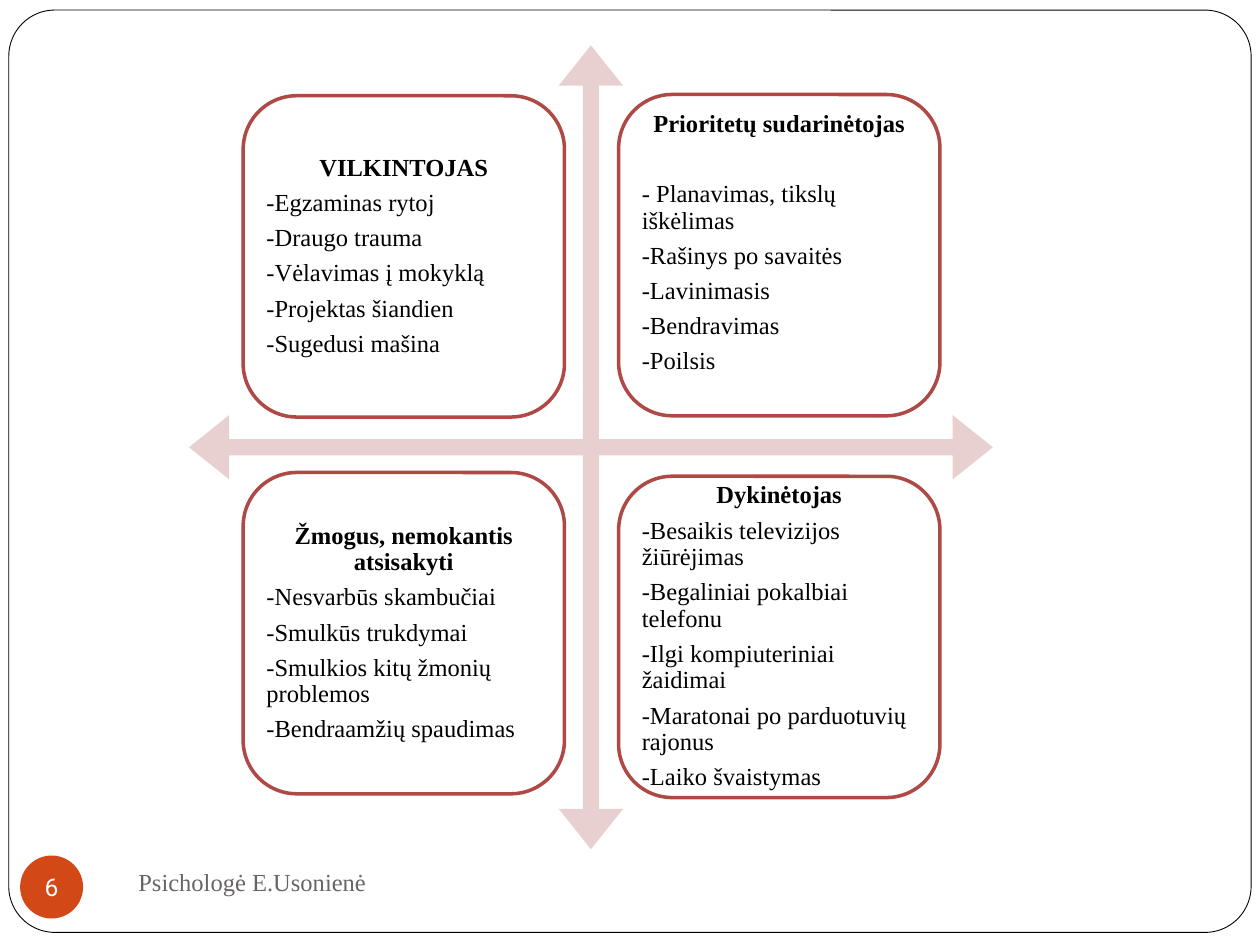
from dataclasses import dataclass

from pptx import Presentation
from pptx.dml.color import RGBColor
from pptx.enum.shapes import MSO_SHAPE
from pptx.enum.text import MSO_ANCHOR, PP_ALIGN
from pptx.util import Inches, Pt

SERIF = "Times New Roman"
SIDE = 2.55
PAD = 0.06


@dataclass
class Card:
    left: float
    top: float
    title: str
    items: list[str]
    align: PP_ALIGN = PP_ALIGN.LEFT
    gap: float = 5  # points below the title
    base: float = PAD  # bottom inset


CARDS = [
    Card(1.93, 0.76, "VILKINTOJAS",
         ["-Egzaminas rytoj", "-Draugo trauma", "-Vėlavimas į mokyklą",
          "-Projektas šiandien", "-Sugedusi mašina"], PP_ALIGN.JUSTIFY),
    Card(4.91, 0.75, "Prioritetų sudarinėtojas",
         ["- Planavimas, tikslų iškėlimas", "-Rašinys po savaitės",
          "-Lavinimasis", "-Bendravimas", "-Poilsis"], gap=25, base=0.25),
    Card(1.93, 3.75, "Žmogus, nemokantis atsisakyti",
         ["-Nesvarbūs skambučiai", "-Smulkūs trukdymai",
          "-Smulkios kitų žmonių problemos", "-Bendraamžių spaudimas"]),
    Card(4.91, 3.78, "Dykinėtojas",
         ["-Besaikis televizijos žiūrėjimas", "-Begaliniai pokalbiai telefonu",
          "-Ilgi kompiuteriniai žaidimai", "-Maratonai po parduotuvių rajonus",
          "-Laiko švaistymas"]),
]


def color(code: str) -> RGBColor:
    return RGBColor.from_string(code)


def add_shape(slide, kind, left: float, top: float, width: float, height: float,
              fill: str, line: str = "", weight: float = 1, adj: tuple = ()):
    shape = slide.shapes.add_shape(
        kind, Inches(left), Inches(top), Inches(width), Inches(height))
    shape.shadow.inherit = False
    shape.fill.solid()
    shape.fill.fore_color.rgb = color(fill)
    if line:
        shape.line.color.rgb = color(line)
        shape.line.width = Pt(weight)
    else:
        shape.line.fill.background()
    for i, value in enumerate(adj):
        shape.adjustments[i] = value
    return shape


def set_inset(frame, side: float, base: float) -> None:
    frame.margin_left = frame.margin_right = frame.margin_top = Inches(side)
    frame.margin_bottom = Inches(base)


def set_font(para, code: str, name: str = SERIF, bold: bool = False) -> None:
    for run in para.runs:
        run.font.name = name
        run.font.size = Pt(14)
        run.font.bold = bold
        run.font.color.rgb = color(code)


def add_card(slide, card: Card) -> None:
    shape = add_shape(slide, MSO_SHAPE.ROUNDED_RECTANGLE, card.left, card.top,
                      SIDE, SIDE, "FFFFFF", "AE4946", 2)
    frame = shape.text_frame
    frame.word_wrap = True
    frame.vertical_anchor = MSO_ANCHOR.MIDDLE
    set_inset(frame, PAD, card.base)
    frame.text = "\n".join([card.title, *card.items])
    for i, para in enumerate(frame.paragraphs):
        head = i == 0
        para.alignment = PP_ALIGN.CENTER if head else card.align
        para.line_spacing = 0.9
        para.space_after = Pt(card.gap if head else 5)
        set_font(para, "000000", bold=head)


def add_footer(slide, text: str, number: str) -> None:
    box = slide.shapes.add_textbox(
        Inches(1), Inches(6.75), Inches(4.33), Inches(0.5))
    frame = box.text_frame
    frame.word_wrap = True
    frame.vertical_anchor = MSO_ANCHOR.MIDDLE
    frame.text = text
    set_font(frame.paragraphs[0], "696464")

    badge = add_shape(slide, MSO_SHAPE.OVAL, 0.16, 6.79, 0.5, 0.5, "D34817")
    frame = badge.text_frame
    frame.word_wrap = False
    frame.vertical_anchor = MSO_ANCHOR.MIDDLE
    set_inset(frame, 0, 0)
    frame.text = number
    frame.paragraphs[0].alignment = PP_ALIGN.CENTER
    set_font(frame.paragraphs[0], "FFFFFF", "Roboto")


def main() -> None:
    deck = Presentation()
    deck.slide_width, deck.slide_height = Inches(10), Inches(7.5)
    slide = deck.slides.add_slide(deck.slide_layouts[6])
    add_shape(slide, MSO_SHAPE.ROUNDED_RECTANGLE, 0.07, 0.08, 9.86, 7.32,
              "FFFFFF", "000000", 0.5, (0.05,))
    add_shape(slide, MSO_SHAPE.QUAD_ARROW, 1.5, 0.36, 6.38, 6.38,
              "E8D0D0", adj=(0.02, 0.04, 0.05))
    for card in CARDS:
        add_card(slide, card)
    add_footer(slide, "Psichologė E.Usonienė", "6")
    deck.save("out.pptx")


if __name__ == "__main__":
    main()
